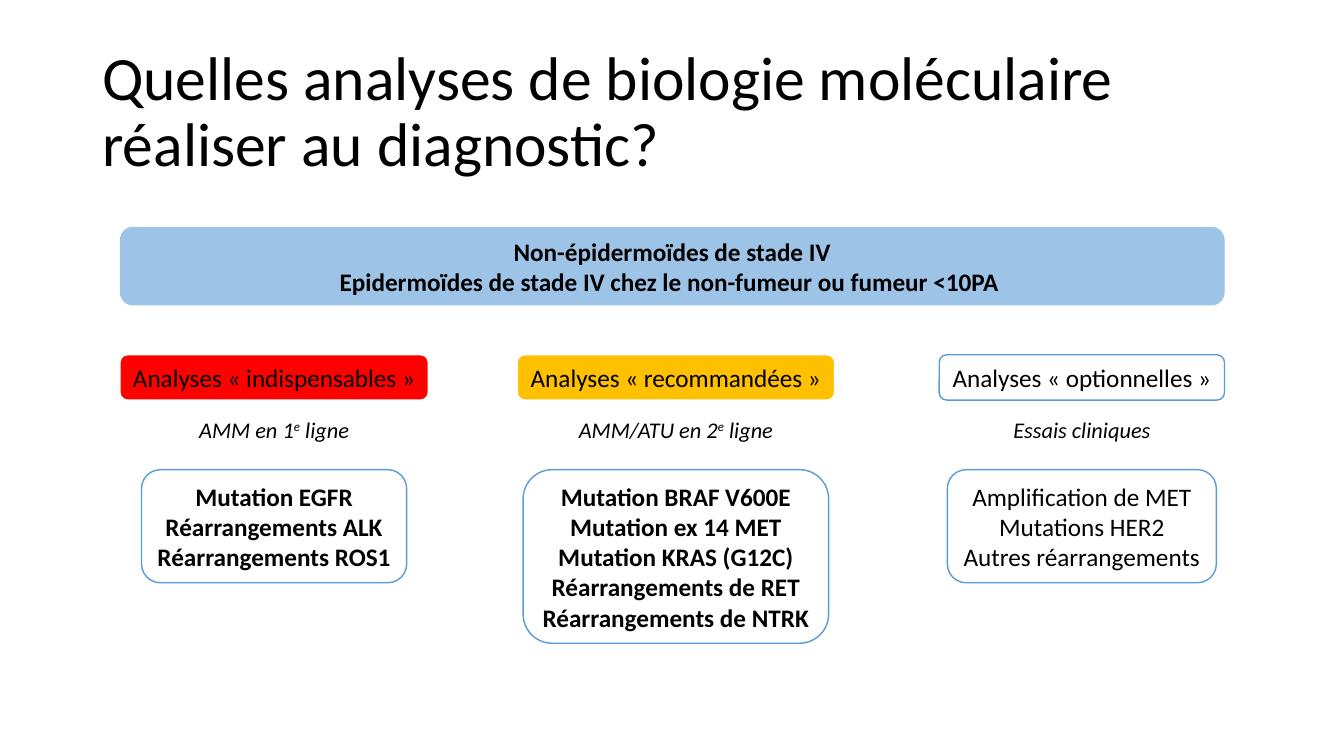
from pptx import Presentation
from pptx.dml.color import RGBColor
from pptx.enum.shapes import MSO_SHAPE
from pptx.enum.text import MSO_ANCHOR, PP_ALIGN
from pptx.util import Pt

BLACK = RGBColor(0x00, 0x00, 0x00)
WHITE = RGBColor(0xFF, 0xFF, 0xFF)
RED = RGBColor(0xFF, 0x00, 0x00)
AMBER = RGBColor(0xFF, 0xC0, 0x00)
BLUE = RGBColor(0x5B, 0x9B, 0xD5)
PALE_BLUE = RGBColor(0x9D, 0xC3, 0xE6)

FONT = "Calibri"
HEADING_TOP, HEADING_HEIGHT = 253.4, 32.4
NOTE_TOP, NOTE_HEIGHT = 293.8, 26.6
DETAIL_TOP, DETAIL_PADDING, LINE_HEIGHT = 335.5, 16, 21.6

# Each column: centre, heading (text, width, fill, line),
# note (spans, width), details (lines, width, bold)
COLUMNS = [
    (195.8, ("Analyses « indispensables »", 220.3, RED, WHITE),
     (["AMM en 1", "e", " ligne"], 123.8),
     (["Mutation EGFR", "Réarrangements ALK", "Réarrangements ROS1"], 189.4, True)),
    (482.8, ("Analyses « recommandées »", 226.8, AMBER, WHITE),
     (["AMM/ATU en 2", "e", " ligne"], 155.5),
     (["Mutation BRAF V600E", "Mutation ex 14 MET", "Mutation KRAS (G12C)",
       "Réarrangements de RET", "Réarrangements de NTRK"], 218.2, True)),
    (772.8, ("Analyses « optionnelles »", 203.8, WHITE, BLUE),
     (["Essais cliniques"], 113.8),
     (["Amplification de MET", "Mutations HER2", "Autres réarrangements"], 192.2, False)),
]


def add_span(para, text, size, bold=False, italic=False):
    span = para.add_run()
    span.text = text
    span.font.name = FONT
    span.font.size = Pt(size)
    span.font.bold = bold
    span.font.italic = italic
    span.font.color.rgb = BLACK
    return span


def add_title(page, text):
    box = page.shapes.add_textbox(Pt(66), Pt(28.8), Pt(828), Pt(104.4))
    frame = box.text_frame
    frame.word_wrap = True
    frame.vertical_anchor = MSO_ANCHOR.MIDDLE
    para = frame.paragraphs[0]
    para.line_spacing = 0.9
    add_span(para, text, 44)


def add_panel(page, centre, top, width, height, lines, fill, line=None, bold=False, wrap=False):
    box = page.shapes.add_shape(MSO_SHAPE.ROUNDED_RECTANGLE, Pt(centre - width / 2),
                                Pt(top), Pt(width), Pt(height))
    box.shadow.inherit = False
    box.fill.solid()
    box.fill.fore_color.rgb = fill
    if line is None:
        box.line.fill.background()
    else:
        box.line.color.rgb = line
        box.line.width = Pt(1)
    frame = box.text_frame
    frame.word_wrap = wrap
    frame.vertical_anchor = MSO_ANCHOR.MIDDLE
    for index, text in enumerate(lines):
        para = frame.add_paragraph() if index else frame.paragraphs[0]
        para.alignment = PP_ALIGN.CENTER
        add_span(para, text, 18, bold=bold)


def add_note(page, centre, width, spans):
    box = page.shapes.add_textbox(Pt(centre - width / 2), Pt(NOTE_TOP), Pt(width), Pt(NOTE_HEIGHT))
    box.text_frame.word_wrap = False
    para = box.text_frame.paragraphs[0]
    para.alignment = PP_ALIGN.CENTER
    for text in spans:
        span = add_span(para, text, 16, italic=True)
        if text == "e":  # ordinal mark
            span._r.get_or_add_rPr().set("baseline", "30000")


def add_column(page, centre, heading, note, details):
    title, heading_width, fill, line = heading
    add_panel(page, centre, HEADING_TOP, heading_width, HEADING_HEIGHT, [title], fill, line)
    spans, note_width = note
    add_note(page, centre, note_width, spans)
    lines, detail_width, bold = details
    height = DETAIL_PADDING + LINE_HEIGHT * len(lines)
    add_panel(page, centre, DETAIL_TOP, detail_width, height, lines, WHITE, BLUE, bold)


def main():
    deck = Presentation()
    deck.slide_width, deck.slide_height = Pt(960), Pt(540)
    page = deck.slides.add_slide(deck.slide_layouts[6])

    add_title(page, "Quelles analyses de biologie moléculaire réaliser au diagnostic?")

    # Patients concerned
    add_panel(page, 480.2, 162, 789.1, 56.2,
              ["Non-épidermoïdes de stade IV",
               "Epidermoïdes de stade IV chez le non-fumeur ou fumeur <10PA "],
              PALE_BLUE, bold=True, wrap=True)

    # Three levels of analysis
    for column in COLUMNS:
        add_column(page, *column)

    deck.save("out.pptx")


if __name__ == "__main__":
    main()
